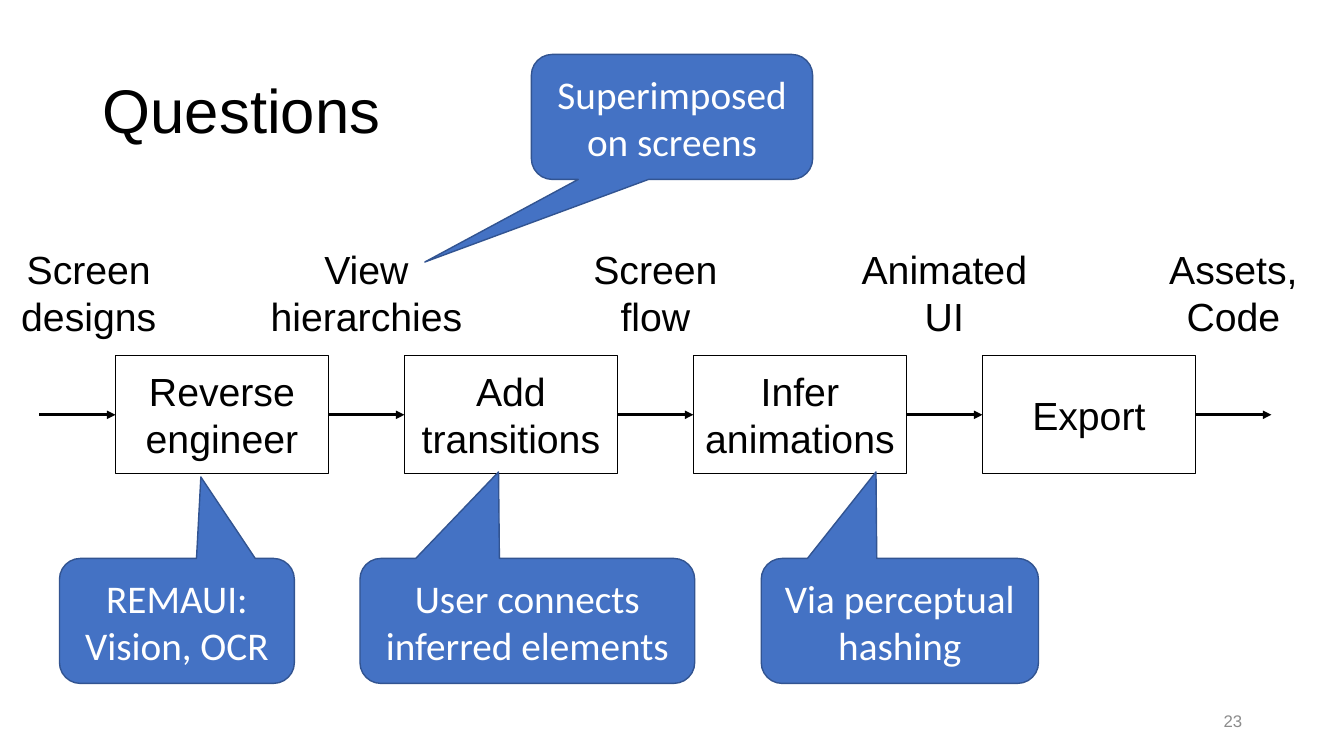
from lxml.etree import SubElement
from pptx import Presentation
from pptx.dml.color import RGBColor
from pptx.enum.shapes import MSO_CONNECTOR, MSO_SHAPE
from pptx.enum.text import MSO_ANCHOR, MSO_AUTO_SIZE, PP_ALIGN
from pptx.oxml.ns import qn
from pptx.util import Inches, Pt

BLACK = RGBColor(0x00, 0x00, 0x00)
WHITE = RGBColor(0xFF, 0xFF, 0xFF)
BLUE = RGBColor(0x44, 0x72, 0xC4)
DARK_BLUE = RGBColor(0x32, 0x54, 0x91)
GRAY = RGBColor(0x8C, 0x8C, 0x8C)

STEPS = ["Reverse\nengineer", "Add\ntransitions", "Infer\nanimations", "Export"]
ARTIFACTS = [
    ("Screen\ndesigns", 1.76),
    ("View\nhierarchies", 2.11),
    ("Screen\nflow", 1.45),
    ("Animated\nUI", 1.86),
    ("Assets,\nCode", 1.49),
]
CALLOUTS = [
    ("REMAUI: Vision, OCR", (0.59, 5.54, 2.33, 1.24), (0.102, -1.152)),
    ("User connects inferred elements", (3.57, 5.54, 3.32, 1.24), (-0.086, -1.192)),
    ("Via perceptual hashing", (7.55, 5.54, 2.75, 1.24), (-0.086, -1.192)),
    ("Superimposed on screens", (5.27, 0.54, 2.79, 1.24), (-0.879, 1.161)),
]


def write_text(shape, text, size=28, font="Arial", color=BLACK,
               align=PP_ALIGN.CENTER, anchor=MSO_ANCHOR.MIDDLE, wrap=True):
    """Put one formatted paragraph into a shape."""
    frame = shape.text_frame
    frame.word_wrap = wrap
    frame.auto_size = MSO_AUTO_SIZE.NONE
    frame.vertical_anchor = anchor
    paragraph = frame.paragraphs[0]
    paragraph.text = text
    paragraph.alignment = align
    for run in paragraph.runs:
        run.font.size = Pt(size)
        run.font.name = font
        run.font.color.rgb = color
    return paragraph


def add_box(slide, kind, box, fill, line):
    """Add a filled and outlined preset shape."""
    shape = slide.shapes.add_shape(kind, *map(Inches, box))
    shape.shadow.inherit = False
    shape.fill.solid()
    shape.fill.fore_color.rgb = fill
    shape.line.color.rgb = line
    shape.line.width = Pt(1)
    return shape


def add_arrow(slide, left, right, y):
    """Draw a horizontal arrow pointing right."""
    arrow = slide.shapes.add_connector(
        MSO_CONNECTOR.STRAIGHT, Inches(left), Inches(y), Inches(right), Inches(y))
    arrow.line.color.rgb = BLACK
    arrow.line.width = Pt(2)
    SubElement(arrow.line._get_or_add_ln(), qn("a:tailEnd"), type="triangle")
    SubElement(arrow._element.spPr, qn("a:effectLst"))


def add_title(slide, text, box):
    """Place the title placeholder."""
    title = slide.shapes.title
    title.left, title.top, title.width, title.height = map(Inches, box)
    paragraph = write_text(title, text, size=44, align=PP_ALIGN.LEFT)
    paragraph.line_spacing = 0.9


def add_pipeline(slide, box):
    """Draw the steps, the arrows around them and the artifact over each arrow."""
    left, top, width, height = box
    gap = 0.755
    step_width = (width - gap * (len(STEPS) + 1)) / len(STEPS)
    pitch = step_width + gap
    for index, step in enumerate(STEPS):
        step_box = (left + gap + index * pitch, top, step_width, height)
        write_text(add_box(slide, MSO_SHAPE.RECTANGLE, step_box, WHITE, BLACK), step)
    for index, (artifact, label_width) in enumerate(ARTIFACTS):
        start = left + index * pitch
        add_arrow(slide, start, start + gap, top + height / 2)
        label_left = max(0, start + gap / 2 - label_width / 2)
        label = slide.shapes.add_textbox(
            Inches(label_left), Inches(top - 1.15), Inches(label_width), Inches(1.04))
        write_text(label, artifact, anchor=MSO_ANCHOR.TOP)


def add_callout(slide, text, box, tip):
    """Add a rounded speech callout whose tip is relative to its centre."""
    callout = add_box(slide, MSO_SHAPE.ROUNDED_RECTANGULAR_CALLOUT, box, BLUE, DARK_BLUE)
    for index, value in enumerate((*tip, 0.167)):
        callout.adjustments[index] = value
    write_text(callout, text, font="Calibri", color=WHITE)


def add_page_number(slide, text, box):
    """Write the page number at the right edge of its box."""
    number = slide.shapes.add_textbox(*map(Inches, box))
    write_text(number, text, size=12, color=GRAY, align=PP_ALIGN.RIGHT)


def main():
    """Build and save the slide."""
    presentation = Presentation()
    presentation.slide_width = Inches(13.33)
    presentation.slide_height = Inches(7.5)
    slide = presentation.slides.add_slide(presentation.slide_layouts[5])
    add_title(slide, "Questions", (0.92, 0.4, 11.5, 1.45))
    add_pipeline(slide, (0.39, 3.53, 12.22, 1.17))
    add_page_number(slide, "23", (9.42, 6.95, 3, 0.4))
    for text, box, tip in CALLOUTS:
        add_callout(slide, text, box, tip)
    presentation.save("out.pptx")


if __name__ == "__main__":
    main()
